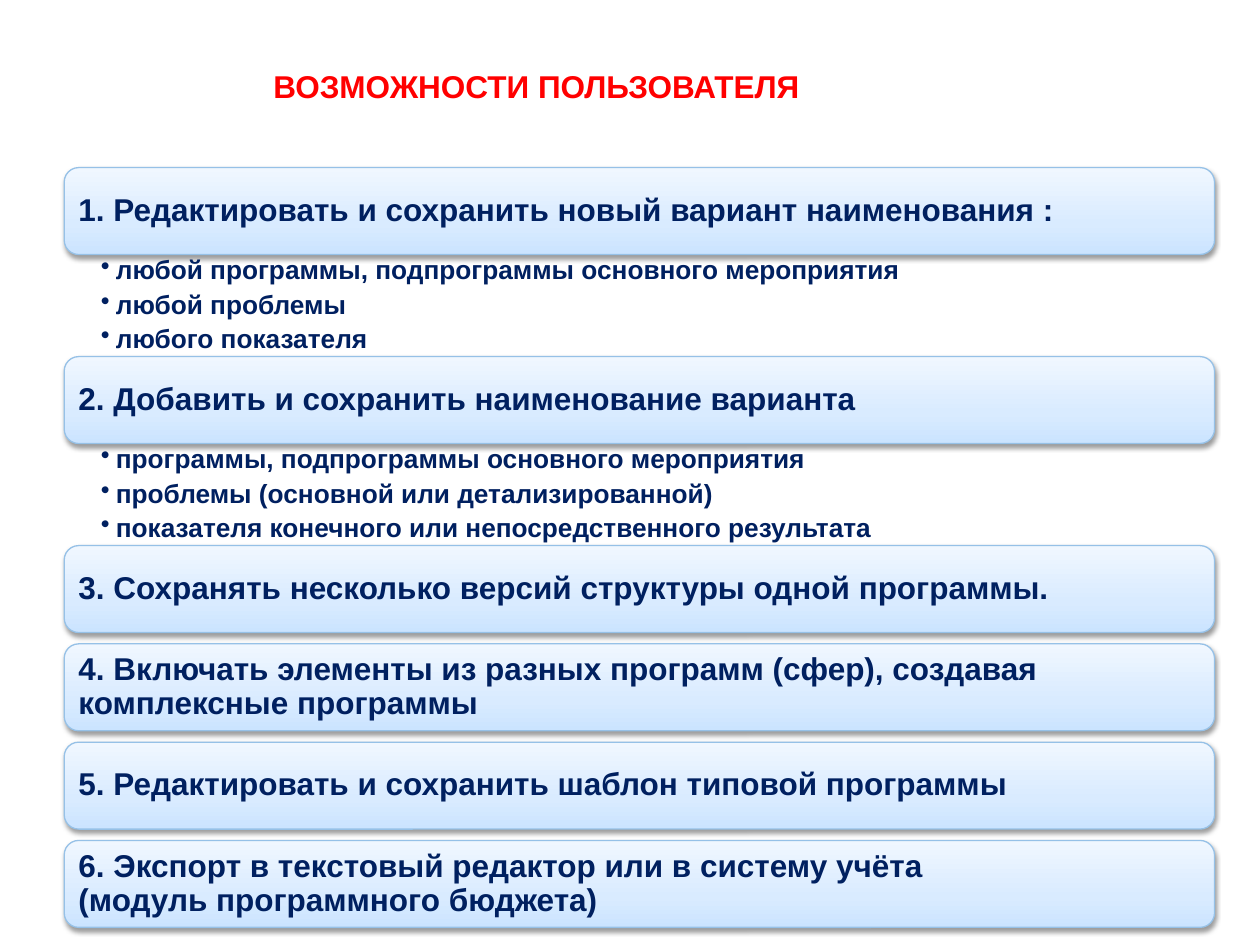
import lxml.etree
import pptx
import pptx.dml.color
import pptx.enum.shapes
import pptx.enum.text
import pptx.oxml
import pptx.oxml.ns
import pptx.util

COLORS = {"title": "FF0000", "text": "002060", "border": "96C1E7", "shadow": "000000"}
BAR_STOPS = ((0, "CBE4FF"), (35, "D9EBFF"), (100, "F0F7FF"))
FONT = "Arial"

# Column and row measures, in inches
LEFT, WIDTH = 0.51, 9.13
FIRST_TOP = 1.33
BAR_HEIGHT, LIST_HEIGHT = 0.69, 0.73
GAP_AFTER_LIST, GAP_AFTER_BAR = 0.08, 0.09

FEATURES = (
    ("1. Редактировать и сохранить новый вариант наименования :",
     ("любой программы, подпрограммы основного мероприятия",
      "любой проблемы",
      "любого показателя")),
    ("2. Добавить и сохранить наименование варианта",
     ("программы, подпрограммы основного мероприятия",
      "проблемы (основной или детализированной)",
      "показателя конечного или непосредственного результата")),
    ("3. Сохранять несколько версий структуры одной программы.", ()),
    ("4. Включать элементы из разных программ (сфер), создавая комплексные программы", ()),
    ("5. Редактировать и сохранить шаблон типовой программы", ()),
    ("6. Экспорт в текстовый редактор или в систему учёта\v(модуль программного бюджета)", ()),
)


def rgb(name):
    return pptx.dml.color.RGBColor.from_string(COLORS[name])


def inches(*lengths):
    return [pptx.util.Inches(length) for length in lengths]


def set_frame(frame, insets, anchor):
    frame.word_wrap = True
    frame.vertical_anchor = anchor
    (frame.margin_left, frame.margin_top,
     frame.margin_right, frame.margin_bottom) = inches(*insets)


def format_para(para, size, color):
    para.alignment = pptx.enum.text.PP_ALIGN.LEFT
    for span in para.runs:
        span.font.name = FONT
        span.font.size = pptx.util.Pt(size)
        span.font.bold = True
        span.font.color.rgb = rgb(color)


def add_bullet(para):
    properties = para._p.get_or_add_pPr()
    indent = pptx.util.Inches(0.12)
    properties.set("marL", str(indent))
    properties.set("indent", str(-indent))
    bullet = lxml.etree.SubElement(properties, pptx.oxml.ns.qn("a:buChar"))
    bullet.set("char", "•")


def add_gradient(shape):
    """Fill from the bottom edge to the top through all stops."""
    shape.fill.gradient()
    shape.fill.gradient_angle = 90
    stops = shape._element.spPr.find(".//" + pptx.oxml.ns.qn("a:gsLst"))
    for stop in list(stops):
        stops.remove(stop)
    for position, color in BAR_STOPS:
        stop = lxml.etree.SubElement(stops, pptx.oxml.ns.qn("a:gs"), pos=str(position * 1000))
        lxml.etree.SubElement(stop, pptx.oxml.ns.qn("a:srgbClr"), val=color)


def add_shadow(shape):
    shape.shadow.inherit = False
    effects = shape._element.spPr.find(pptx.oxml.ns.qn("a:effectLst"))
    effects.append(pptx.oxml.parse_xml(
        f'<a:outerShdw {pptx.oxml.ns.nsdecls("a")} blurRad="{pptx.util.Pt(3.1)}" '
        f'dist="{pptx.util.Pt(1.6)}" dir="5400000" rotWithShape="0">'
        f'<a:srgbClr val="{COLORS["shadow"]}"><a:alpha val="38000"/></a:srgbClr>'
        '</a:outerShdw>'))


def add_title(page, text):
    box = page.shapes.add_textbox(*inches(2.17, 0.53, 7.34, 0.94))
    set_frame(box.text_frame, (0, 0, 0, 0), pptx.enum.text.MSO_ANCHOR.TOP)
    box.text_frame.text = text
    format_para(box.text_frame.paragraphs[0], 18, "title")


def add_bar(page, top, text):
    bar = page.shapes.add_shape(
        pptx.enum.shapes.MSO_SHAPE.ROUNDED_RECTANGLE, *inches(LEFT, top, WIDTH, BAR_HEIGHT))
    add_gradient(bar)
    bar.line.color.rgb = rgb("border")
    bar.line.width = pptx.util.Pt(0.75)
    add_shadow(bar)
    # The rounded outline insets its text by itself, so the margins are smaller
    set_frame(bar.text_frame, (0.08, 0.08, 0.08, 0.08), pptx.enum.text.MSO_ANCHOR.MIDDLE)
    para = bar.text_frame.paragraphs[0]
    para.text = text
    para.line_spacing = 0.9
    format_para(para, 18, "text")


def add_list(page, top, items):
    box = page.shapes.add_textbox(*inches(LEFT, top, WIDTH, LIST_HEIGHT))
    set_frame(box.text_frame, (0.29, 0.02, 0.12, 0.02), pptx.enum.text.MSO_ANCHOR.TOP)
    box.text_frame.text = "\n".join(items)
    for para in box.text_frame.paragraphs:
        add_bullet(para)
        para.line_spacing = 0.9
        para.space_after = pptx.util.Pt(3.5)
        format_para(para, 15, "text")


def main():
    deck = pptx.Presentation()
    deck.slide_width, deck.slide_height = inches(10, 7.5)
    page = deck.slides.add_slide(deck.slide_layouts[6])

    add_title(page, "ВОЗМОЖНОСТИ ПОЛЬЗОВАТЕЛЯ")

    # Stack of bars, some followed by a list
    top = FIRST_TOP
    for heading, items in FEATURES:
        add_bar(page, top, heading)
        top += BAR_HEIGHT
        if items:
            add_list(page, top, items)
            top += LIST_HEIGHT + GAP_AFTER_LIST
        else:
            top += GAP_AFTER_BAR

    deck.save("out.pptx")


if __name__ == "__main__":
    main()
